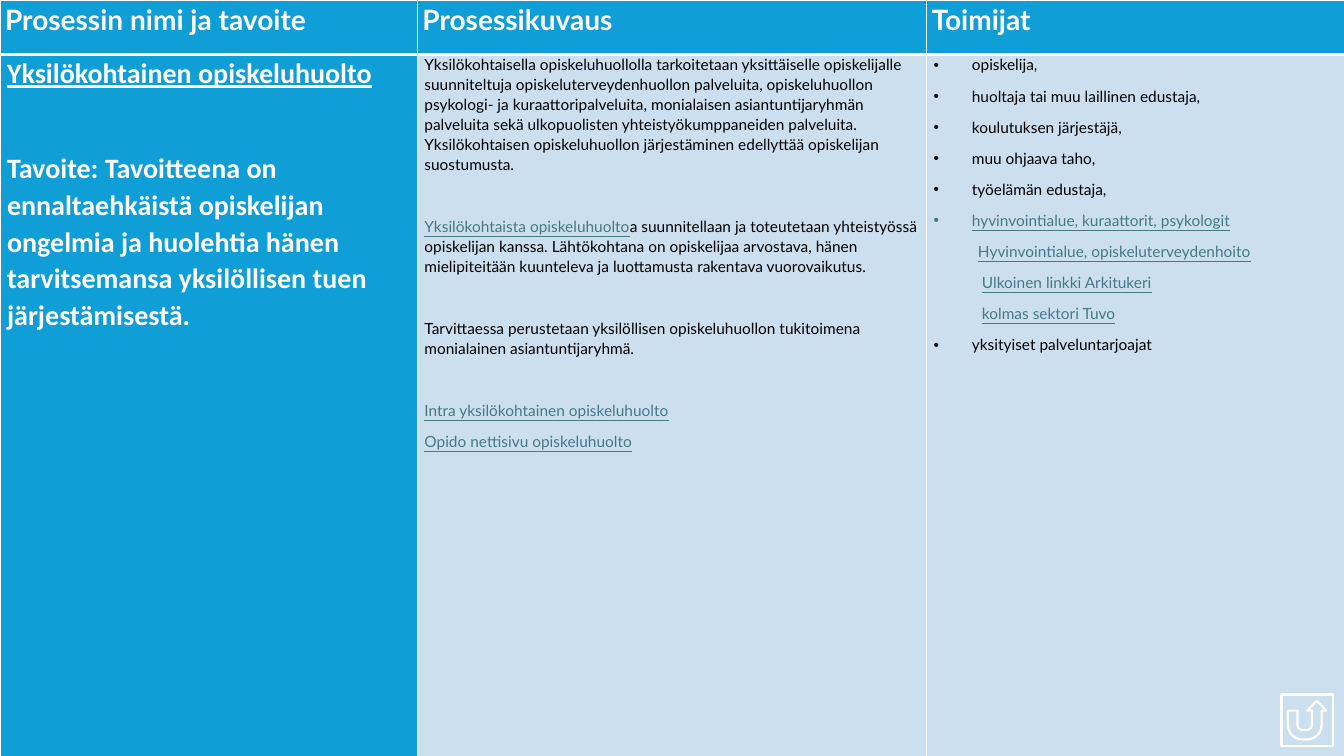
from lxml import etree
from pptx import Presentation
from pptx.dml.color import RGBColor
from pptx.enum import shapes
from pptx.oxml import ns
from pptx.util import Inches, Pt

COLS = {"white": "FFFFFF", "blue": "0F9ED5", "pale": "CCDFEF",
        "link": "467886", "black": "000000"}
FORMS = {
    "head": dict(size=Pt(20), name="Lato", bold=True, underline=False),
    "title": dict(size=Pt(20), name="Calibri", bold=True, underline=True),
    "goal": dict(size=Pt(20), name="Calibri", bold=True, underline=False),
    "body": dict(size=Pt(11), name="Lato", bold=False, underline=False),
    "link": dict(size=Pt(11), name="Lato", bold=False, underline=True),
}
INKS = {"head": "white", "title": "white", "goal": "white",
        "body": "black", "link": "link"}


def add_xml(node, tag, **attrs):
    return etree.SubElement(node, ns.qn(tag), attrs)


def write(cell, paras):
    """Fill a cell with (runs, space after, left indent, bulleted) entries."""
    frame = cell.text_frame
    for i, (runs, after, indent, dot) in enumerate(paras):
        para = frame.add_paragraph() if i else frame.paragraphs[0]
        para.line_spacing = 1.07
        para.space_after = Pt(after)
        props = para._p.get_or_add_pPr()
        props.set("marL", str(Inches(indent)))
        props.set("indent", str(-Inches(indent) if dot else 0))
        if dot:
            add_xml(props, "a:buFont", typeface="Arial")
            add_xml(props, "a:buChar", char="•")
        else:
            add_xml(props, "a:buNone")
        for form, words in runs:
            run = para.add_run()
            run.text = words
            for key, value in FORMS[form].items():
                setattr(run.font, key, value)
            run.font.color.rgb = RGBColor.from_string(COLS[INKS[form]])


heads = ["Prosessin nimi ja tavoite", "Prosessikuvaus", "Toimijat"]

goal = [
    ([("title", "Yksilökohtainen opiskeluhuolto")], 42, 0, False),
    ([("goal", "Tavoite: Tavoitteena on ennaltaehkäistä opiskelijan ongelmia ja "
       "huolehtia hänen tarvitsemansa yksilöllisen tuen järjestämisestä.")],
     8, 0, False),
]

story = [
    ([("body", "Yksilökohtaisella opiskeluhuollolla tarkoitetaan yksittäiselle "
       "opiskelijalle suunniteltuja opiskeluterveydenhuollon palveluita, "
       "opiskeluhuollon psykologi- ja kuraattoripalveluita, monialaisen "
       "asiantuntijaryhmän palveluita sekä ulkopuolisten yhteistyökumppaneiden "
       "palveluita. Yksilökohtaisen opiskeluhuollon järjestäminen edellyttää "
       "opiskelijan suostumusta.")], 30, 0, False),
    ([("link", "Yksilökohtaista opiskeluhuolto"),
      ("body", "a suunnitellaan ja toteutetaan yhteistyössä opiskelijan kanssa. "
       "Lähtökohtana on opiskelijaa arvostava, hänen mielipiteitään kuunteleva "
       "ja luottamusta rakentava vuorovaikutus.")], 30, 0, False),
    ([("body", "Tarvittaessa perustetaan yksilöllisen opiskeluhuollon "
       "tukitoimena monialainen asiantuntijaryhmä.")], 30, 0, False),
    ([("link", "Intra yksilökohtainen opiskeluhuolto")], 8, 0, False),
    ([("link", "Opido nettisivu opiskeluhuolto")], 8, 0, False),
]

actors = [([(form, words)], 8, indent, dot) for form, words, indent, dot in [
    ("body", "opiskelija,", 0.38, True),
    ("body", "huoltaja tai muu laillinen edustaja,", 0.38, True),
    ("body", "koulutuksen järjestäjä,", 0.38, True),
    ("body", "muu ohjaava taho,", 0.38, True),
    ("body", "työelämän edustaja,", 0.38, True),
    ("link", "hyvinvointialue, kuraattorit, psykologit", 0.38, True),
    ("link", "Hyvinvointialue, opiskeluterveydenhoito", 0.44, False),
    ("link", "Ulkoinen linkki Arkitukeri", 0.48, False),
    ("link", "kolmas sektori Tuvo", 0.48, False),
    ("body", "yksityiset palveluntarjoajat", 0.38, True),
]]

deck = Presentation()
deck.slide_width, deck.slide_height = Inches(13.33), Inches(7.5)
slide = deck.slides.add_slide(deck.slide_layouts[6])

table = slide.shapes.add_table(2, 3, 0, 0, Inches(13.33), Inches(8.03)).table
table.horz_banding = False
for col, width in zip(table.columns, [4.14, 5.05, 4.15]):
    col.width = Inches(width)
for row, height in zip(table.rows, [0.54, 7.49]):
    row.height = Inches(height)

rows = [[[([("head", head)], 8, 0, False)] for head in heads],
        [goal, story, actors]]
for r, row in enumerate(rows):
    for c, paras in enumerate(row):
        cell = table.cell(r, c)
        cell.margin_left = cell.margin_right = Inches(0.07 if r else 0.05)
        cell.margin_top = cell.margin_bottom = 0
        for side in "LRTB":
            wide = 3 if r == 0 and side == "B" else 1
            edge = add_xml(cell._tc.get_or_add_tcPr(), f"a:ln{side}",
                           w=str(Pt(wide)))
            add_xml(add_xml(edge, "a:solidFill"), "a:srgbClr", val=COLS["white"])
        cell.fill.solid()
        tint = "pale" if r and c else "blue"
        cell.fill.fore_color.rgb = RGBColor.from_string(COLS[tint])
        write(cell, paras)

back = slide.shapes.add_shape(shapes.MSO_SHAPE.ACTION_BUTTON_RETURN,
                              Inches(12.71), Inches(6.89),
                              Inches(0.51), Inches(0.51))
back.shadow.inherit = False
back.fill.background()
back.line.color.rgb = RGBColor.from_string(COLS["white"])
back.line.width = Pt(1.5)

deck.save("out.pptx")
